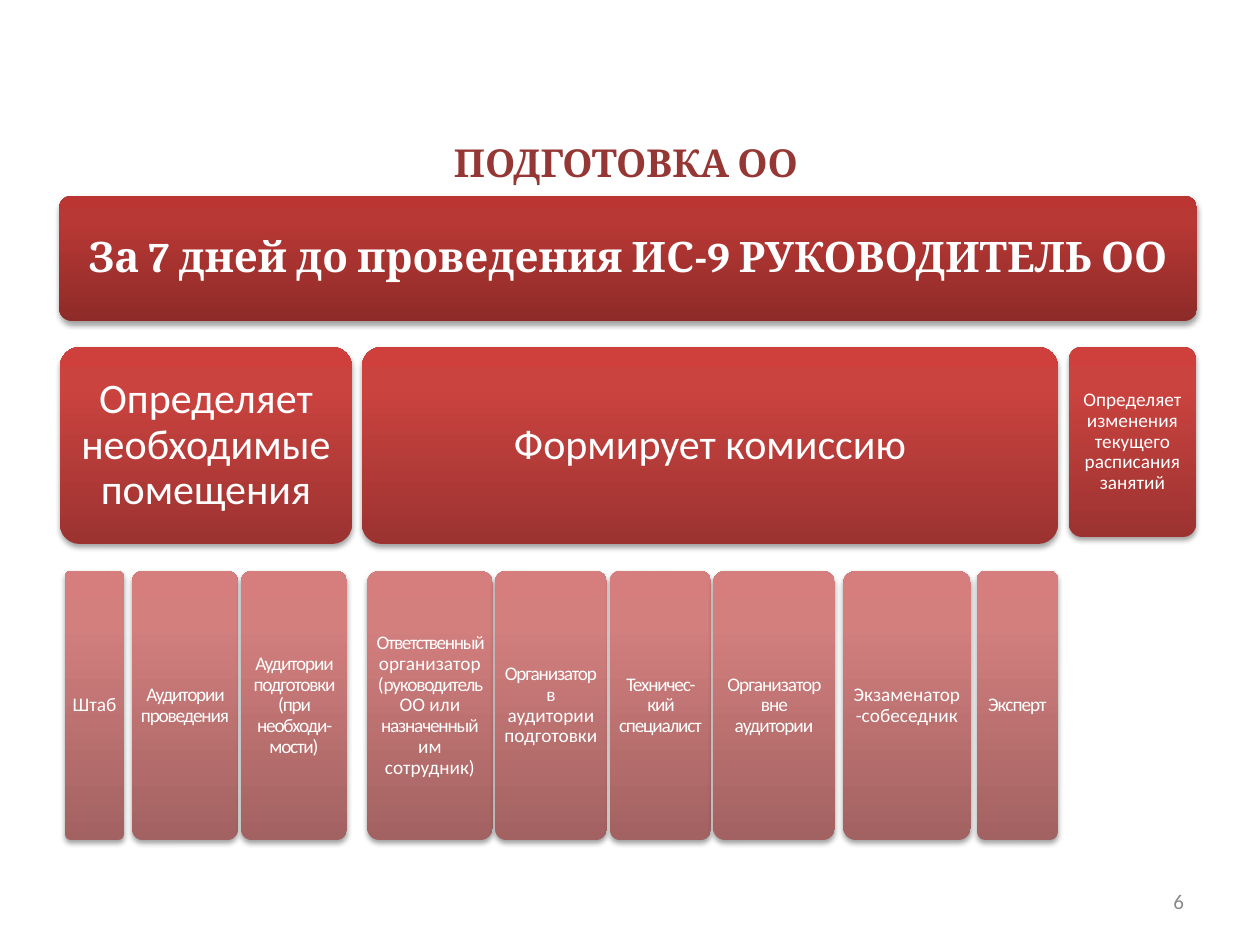
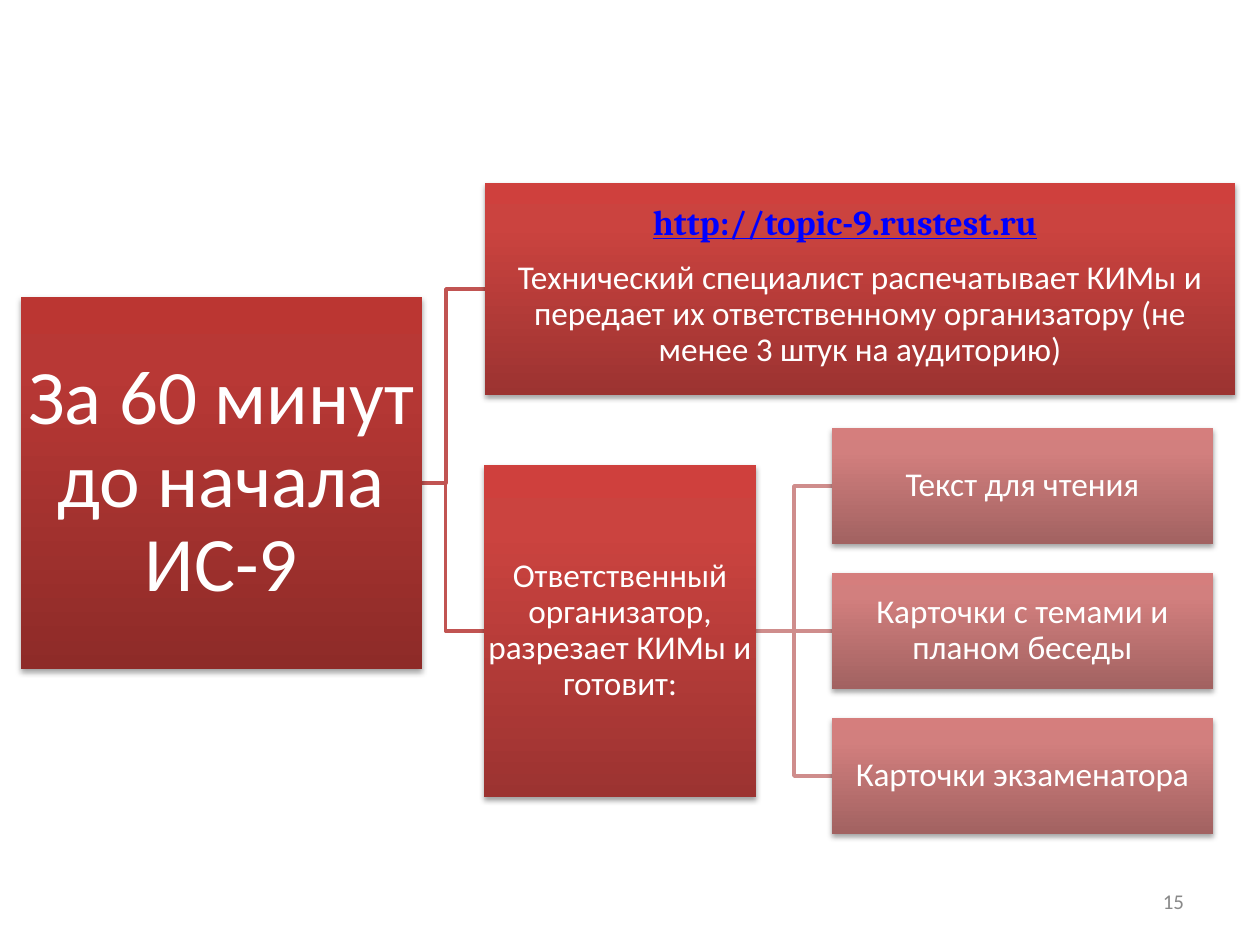
from collections import namedtuple
from copy import deepcopy

from lxml.etree import SubElement
from pptx import Presentation
from pptx.dml.color import RGBColor
from pptx.enum.shapes import MSO_CONNECTOR as LINK, MSO_SHAPE as SHAPE
from pptx.enum.text import MSO_ANCHOR as ANCHOR, PP_ALIGN as ALIGN
from pptx.oxml.ns import qn
from pptx.util import Pt

EMU_PER_PX = 914400 / 126

WHITE = RGBColor(0xFF, 0xFF, 0xFF)
TITLE_RED = RGBColor(0x95, 0x37, 0x35)
NUMBER_GREY = RGBColor(0x89, 0x89, 0x89)
LINK_BLUE = RGBColor(0x00, 0x00, 0xFF)
BRANCH_RED = RGBColor(0xC1, 0x54, 0x52)
LEAF_PINK = RGBColor(0xCF, 0x8D, 0x8C)

DARK = [RGBColor(0x8E, 0x2B, 0x28), RGBColor(0xB8, 0x38, 0x35), RGBColor(0xBB, 0x36, 0x32)]
BRIGHT = [RGBColor(0x9C, 0x33, 0x31), RGBColor(0xCB, 0x43, 0x3F), RGBColor(0xCF, 0x40, 0x3D)]
PALE = [RGBColor(0xA2, 0x62, 0x61), RGBColor(0xD2, 0x7F, 0x7E), RGBColor(0xD5, 0x7E, 0x7D)]
STOPS = [0, 0.8, 1]

BODY = {"name": "Calibri", "color": WHITE}
TITLE = {"name": "Cambria", "size": Pt(22), "bold": True, "color": TITLE_RED}
BANNER = {"name": "Cambria", "size": Pt(24), "bold": True, "color": WHITE}
TASK = BODY | {"size": Pt(24)}
SMALL = BODY | {"size": Pt(11)}
MOMENT = BODY | {"size": Pt(44)}
STEP = BODY | {"size": Pt(19)}
ADDRESS = {"name": "Cambria", "size": Pt(20), "bold": True, "underline": True, "color": LINK_BLUE}
NUMBER = {"name": "Calibri", "size": Pt(12), "color": NUMBER_GREY}

SLIDE = (1260, 945)
WIDE_INSET = (12, 12, 12, 12)
SMALL_INSET = (6, 6, 6, 6)
NARROW_INSET = (4, 6, 4, 6)
NARROW_LIMIT = 127
TIGHT_INSET = (1, 1, 1, 1)
TEXT_INSET = (13, 6, 13, 6)

Box = namedtuple("Box", "left top width height")

ROOMS = [
    (65, 59, [("Штаб", 0)]),
    (132, 106, [("Аудитории проведения", -70)]),
    (241, 106, [("Аудитории подготовки (при необходи-мости)", -70)]),
]
COMMISSION = [
    (367, 126, [
        ("Ответственный ", -80), ("организатор (", 0), ("руководитель ", -70),
        ("ОО или ", 0), ("назначенный", -70), (" им сотрудник)", 0),
    ]),
    (495, 112, [("Организатор", -70), (" в аудитории подготовки", 0)]),
    (610, 101, [("Техничес-кий специалист", -70)]),
    (713, 122, [("Организатор вне аудитории", -60)]),
    (843, 128, [("Экзаменатор-собеседник", 0)]),
    (977, 81, [("Эксперт", -60)]),
]
MATERIALS = ["Текст для чтения", "Карточки с темами и планом беседы", "Карточки экзаменатора"]


def px(length):
    """Turn pixels into EMU."""
    return round(length * EMU_PER_PX)


def emu(box):
    """Turn all lengths of a box into EMU."""
    return [px(length) for length in box]


def write(frame, runs, style, inset, align=ALIGN.CENTER, anchor=ANCHOR.MIDDLE, spacing=0.9):
    """Fill a text frame with one paragraph of (text, tracking) runs."""
    left, top, right, bottom = emu(inset)
    layout = {"word_wrap": True, "vertical_anchor": anchor, "margin_left": left,
              "margin_top": top, "margin_right": right, "margin_bottom": bottom}
    for key, value in layout.items():
        setattr(frame, key, value)
    paragraph = frame.paragraphs[0]
    paragraph.alignment = align
    paragraph.line_spacing = spacing
    for text, tracking in runs:
        if text == "\v":
            paragraph.add_line_break()
            continue
        run = paragraph.add_run()
        run.text = text
        for key, value in style.items():
            if key == "color":
                run.font.color.rgb = value
            else:
                setattr(run.font, key, value)
        if tracking:
            run._r.get_or_add_rPr().set("spc", str(tracking))


def add_label(slide, box, text, style, **layout):
    """Place plain text in a box."""
    label = slide.shapes.add_textbox(*emu(box))
    write(label.text_frame, [(text, 0)], style, TEXT_INSET, spacing=1.0, **layout)


def add_shadow(card):
    """Give a card a soft shadow below it."""
    card.shadow.inherit = False
    effects = card._element.spPr.find(qn("a:effectLst"))
    shadow = SubElement(effects, qn("a:outerShdw"), blurRad="40000", dist="22000",
                        dir="5400000", rotWithShape="0")
    black = SubElement(shadow, qn("a:srgbClr"), val="000000")
    SubElement(black, qn("a:alpha"), val="36000")


def add_card(slide, box, shades, runs, style, inset, outline=SHAPE.RECTANGLE):
    """Draw a shaded card with its text."""
    card = slide.shapes.add_shape(outline, *emu(box))
    if outline == SHAPE.ROUNDED_RECTANGLE:
        card.adjustments[0] = 0.1
    card.line.fill.background()
    card.fill.gradient()
    card.fill.gradient_angle = 90
    stop_list = card._element.spPr.find(".//" + qn("a:gsLst"))
    stop_list.append(deepcopy(stop_list[0]))
    for stop, position, shade in zip(card.fill.gradient_stops, STOPS, shades):
        stop.position = position
        stop.color.rgb = shade
    add_shadow(card)
    write(card.text_frame, runs, style, inset)


def add_branch(slide, start, end, color):
    """Join two points, bending halfway when their heights differ."""
    kind = LINK.STRAIGHT if start[1] == end[1] else LINK.ELBOW
    branch = slide.shapes.add_connector(kind, *emu(start + end))
    branch.line.color.rgb = color
    branch.line.width = Pt(2)
    SubElement(branch._element.spPr, qn("a:effectLst"))


def add_slide(deck, number):
    """Add a blank slide with its page number."""
    slide = deck.slides.add_slide(deck.slide_layouts[6])
    add_label(slide, Box(903, 876, 294, 50), number, NUMBER, align=ALIGN.RIGHT)
    return slide


def draw_task(slide, box, text, members=()):
    """Draw a task of the head and the row of its members below."""
    rounded = SHAPE.ROUNDED_RECTANGLE
    style, inset = (TASK, WIDE_INSET) if members else (SMALL, SMALL_INSET)
    add_card(slide, box, BRIGHT, [(text, 0)], style, inset, rounded)
    for left, width, runs in members:
        member = Box(left, box.top + box.height + 27, width, 269)
        member_inset = NARROW_INSET if width < NARROW_LIMIT else SMALL_INSET
        add_card(slide, member, PALE, runs, SMALL, member_inset, rounded)


def draw_preparation(slide, box):
    """Draw the banner and the three tasks under it."""
    add_card(slide, Box(box.left, box.top, box.width, 125), DARK,
             [("За 7 дней до проведения ИС-9 РУКОВОДИТЕЛЬ ОО", 0)],
             BANNER, WIDE_INSET, SHAPE.ROUNDED_RECTANGLE)
    top = box.top + 151
    draw_task(slide, Box(box.left + 1, top, 292, 197), "Определяет необходимые помещения", ROOMS)
    draw_task(slide, Box(box.left + 303, top, 696, 197), "Формирует комиссию", COMMISSION)
    draw_task(slide, Box(box.left + 1010, top, 127, 190),
              "Определяет изменения текущего расписания занятий")


def draw_printing(slide, box):
    """Draw the printing step with the web address over it."""
    task = ("Технический специалист распечатывает КИМы и передает их "
            "ответственному организатору (не менее 3 штук на аудиторию)")
    add_card(slide, box, BRIGHT, [(task, 0)], STEP, (10, 52, 10, 1))
    add_label(slide, Box(box.left + 155, box.top + 11, 427, 55), "http://topic-9.rustest.ru",
              ADDRESS, align=ALIGN.LEFT, anchor=ANCHOR.TOP)


def draw_cutting(slide, box):
    """Draw the cutting step and the materials that come out of it."""
    middle = box.top + box.height // 2
    leaf_left, leaf_height, pitch = box.left + 348, 116, 145
    for index, material in enumerate(MATERIALS):
        center = middle + (index - 1) * pitch
        add_branch(slide, (box.left + box.width, middle), (leaf_left, center), LEAF_PINK)
        leaf = Box(leaf_left, center - leaf_height // 2, 381, leaf_height)
        add_card(slide, leaf, PALE, [(material, 0)], STEP, TIGHT_INSET)
    add_card(slide, box, BRIGHT, [("Ответственный организатор, разрезает КИМы и готовит:", 0)],
             STEP, TIGHT_INSET)


def draw_last_hour(slide, box):
    """Draw the tree of steps for the last hour."""
    moment = Box(box.left, box.top + 114, 401, 372)
    printing = Box(box.left + 464, box.top, 750, 212)
    cutting = Box(box.left + 463, box.top + 282, 272, 332)
    start = (moment.left + 386, moment.top + moment.height // 2)
    for step in (printing, cutting):
        add_branch(slide, start, (step.left, step.top + step.height // 2), BRANCH_RED)
    add_card(slide, moment, DARK, [("За 60 минут до начала", 0), ("\v", 0), ("ИС-9", 0)],
             MOMENT, (4, 4, 4, 4))
    draw_printing(slide, printing)
    draw_cutting(slide, cutting)


def main():
    """Build both slides and save them."""
    deck = Presentation()
    deck.slide_width, deck.slide_height = emu(SLIDE)
    preparation = add_slide(deck, "6")
    add_label(preparation, Box(59, 128, 1134, 69), "ПОДГОТОВКА ОО", TITLE)
    draw_preparation(preparation, Box(59, 196, 1138, 644))
    draw_last_hour(add_slide(deck, "15"), Box(21, 183, 1214, 651))
    deck.save("out.pptx")


if __name__ == "__main__":
    main()
